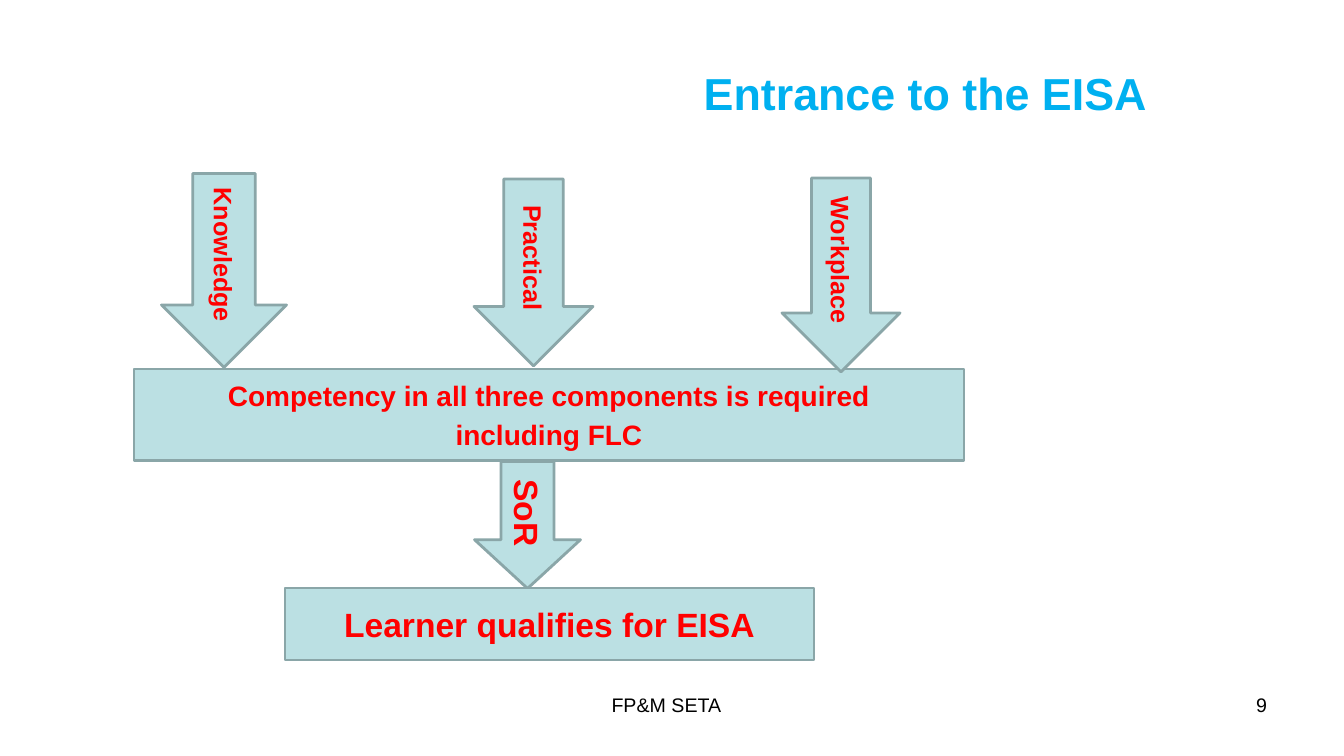
"""Build the slide on the entrance to the EISA."""
from dataclasses import dataclass

from pptx import Presentation
from pptx.dml.color import RGBColor
from pptx.enum.shapes import MSO_SHAPE
from pptx.enum.text import MSO_ANCHOR, PP_ALIGN
from pptx.util import Emu, Pt

TITLE = ("Entrance to the EISA", (573, 30, 705, 126))
NUMBER = ("9", (964, 688, 313, 52))
FOOTER = ("FP&M SETA", (454, 688, 425, 52))
RECORD = ("SoR", (464, 472, 127, 106))
RESULT = ("Learner qualifies for EISA", (285, 588, 529, 72))
RULE = ("Competency in all three components is required\nincluding FLC",
        (134, 369, 830, 92))
PARTS = [
    ("Knowledge", (127, 208, 194, 125)),
    ("Practical", (440, 213, 187, 119)),
    ("Workplace", (744, 216, 194, 118)),
]


@dataclass(frozen=True)
class Theme:
    """Hold the colours, font and type sizes."""
    font: str = "Arial"
    title: str = "00B0F0"
    text: str = "FF0000"
    foot: str = "000000"
    fill: str = "BBE0E3"
    edge: str = "8AA6A8"
    head: int = 32
    large: int = 24
    body: int = 20
    label: int = 18
    small: int = 14
    line: int = 2
    gap: int = 4


LOOK = Theme()
SCALE = 914400 / 100.8


def px(*sizes):
    """Turn pixel lengths into EMU."""
    return [Emu(round(size * SCALE)) for size in sizes]


def write(shape, words, size, color, align=PP_ALIGN.CENTER,
          anchor=MSO_ANCHOR.MIDDLE):
    """Put formatted words into a shape."""
    frame = shape.text_frame
    frame.text = words
    frame.word_wrap = True
    frame.vertical_anchor = anchor
    for index, para in enumerate(frame.paragraphs):
        para.alignment = align
        if index:
            para.space_before = Pt(LOOK.gap)
        for run in para.runs:
            run.font.name = LOOK.font
            run.font.size = Pt(size)
            run.font.bold = color != LOOK.foot
            run.font.color.rgb = RGBColor.from_string(color)


def add_text(slide, item, size, color, **place):
    """Add a plain text box."""
    words, box = item
    write(slide.shapes.add_textbox(*px(*box)), words, size, color, **place)


def add_block(slide, item, size, kind=MSO_SHAPE.RECTANGLE):
    """Add a filled and outlined shape with red text."""
    words, box = item
    shape = slide.shapes.add_shape(kind, *px(*box))
    shape.shadow.inherit = False
    shape.fill.solid()
    shape.fill.fore_color.rgb = RGBColor.from_string(LOOK.fill)
    shape.line.color.rgb = RGBColor.from_string(LOOK.edge)
    shape.line.width = Pt(LOOK.line)
    write(shape, words, size, LOOK.text)
    return shape


def add_arrow(slide, item, size):
    """Add an arrow that points down."""
    arrow = add_block(slide, item, size, MSO_SHAPE.RIGHT_ARROW)
    arrow.rotation = 90
    return arrow


def main():
    """Build and save the deck."""
    deck = Presentation()
    deck.slide_width, deck.slide_height = px(1344, 756)
    slide = deck.slides.add_slide(deck.slide_layouts[6])
    add_text(slide, TITLE, LOOK.head, LOOK.title)
    add_text(slide, NUMBER, LOOK.small, LOOK.foot,
             align=PP_ALIGN.RIGHT, anchor=MSO_ANCHOR.TOP)
    record = add_arrow(slide, RECORD, LOOK.large)
    record.adjustments[1] = 0.46
    add_block(slide, RESULT, LOOK.large)
    add_block(slide, RULE, LOOK.body)
    for part in PARTS:
        add_arrow(slide, part, LOOK.label)
    add_text(slide, FOOTER, LOOK.small, LOOK.foot, anchor=MSO_ANCHOR.TOP)
    deck.save("out.pptx")


if __name__ == "__main__":
    main()
